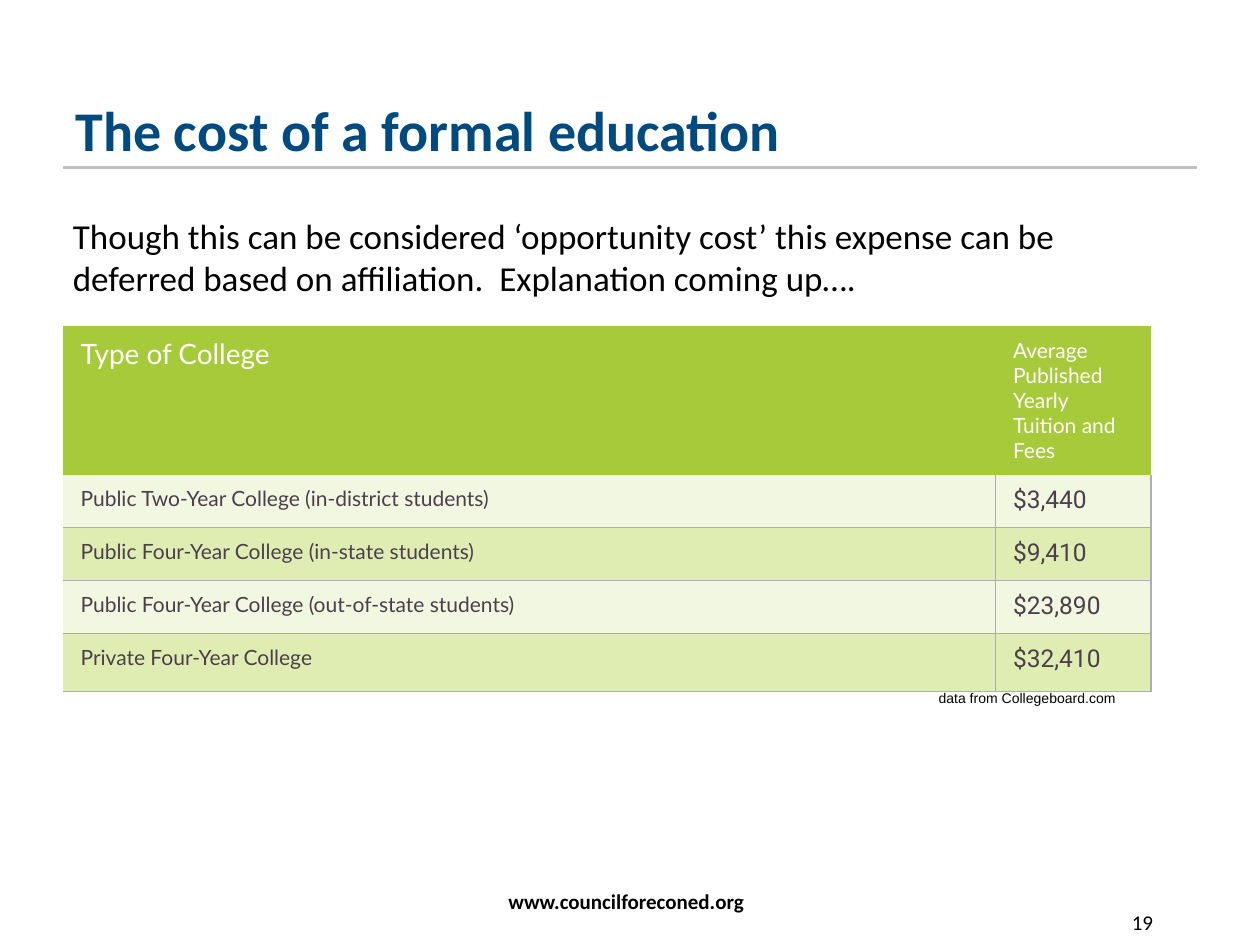
from lxml.etree import SubElement
from pptx import Presentation
from pptx.dml.color import RGBColor
from pptx.enum.text import MSO_ANCHOR as Anchor, PP_ALIGN as Align
from pptx.oxml.ns import qn
from pptx.util import Inches, Pt

deck = Presentation()
deck.slide_width, deck.slide_height = Inches(10), Inches(7.5)
page = deck.slides.add_slide(deck.slide_layouts[6])
across, down = deck.slide_width / 100, deck.slide_height / 100  # one percent


def color(hex_code):
    return RGBColor.from_string(hex_code)


def write(frame, text, font, size, ink, bold=False, align=Align.LEFT):
    frame.word_wrap = True
    para = frame.paragraphs[0]
    para.text = text
    para.alignment = align
    para.font.name, para.font.size, para.font.bold = font, Pt(size), bold
    para.font.color.rgb = color(ink)


# Rule under the title
rule = page.shapes.add_connector(1, int(5 * across), int(17.73 * down),
                                 int(95 * across), int(17.73 * down))
rule.line.color.rgb = color("C0C0C0")
rule.line.width = Pt(1.25)
SubElement(rule._element.spPr, qn("a:effectLst"))

# Text boxes: left, top, width, height in percent of the slide
texts = [
    (5, 8.93, 90, 8.93, "The cost of a formal education",
     "Calibri", 32, "004A80", True, Align.LEFT, Anchor.BOTTOM),
    (4.8, 22, 90, 6.67,
     "Though this can be considered ‘opportunity cost’ this expense can be "
     "deferred based on affiliation.  Explanation coming up….",
     "Calibri", 20, "000000", False, Align.LEFT, Anchor.TOP),
    (6.5, 93.33, 86.4, 6.67, "www.councilforeconed.org",
     "Calibri", 12, "000000", True, Align.CENTER, Anchor.TOP),
    (78.3, 95.6, 14.2, 6.67, "19",
     "Calibri", 12, "000000", False, Align.RIGHT, Anchor.TOP),
    (73.5, 72.27, 23.9, 3.2, "data from Collegeboard.com",
     "Arial", 8, "000000", False, Align.LEFT, Anchor.TOP),
]
for left, top, width, height, text, font, size, ink, bold, align, anchor in texts:
    box = page.shapes.add_textbox(int(left * across), int(top * down),
                                  int(width * across), int(height * down))
    box.text_frame.vertical_anchor = anchor
    write(box.text_frame, text, font, size, ink, bold, align)

# Tuition table
costs = [
    ("Type of College", "Average Published Yearly Tuition and Fees"),
    ("Public Two-Year College (in-district students)", "$3,440"),
    ("Public Four-Year College (in-state students)", "$9,410"),
    ("Public Four-Year College (out-of-state students)", "$23,890"),
    ("Private Four-Year College", "$32,410"),
]
column_widths = [74, 12.35]
row_heights = [15.73, 5.6, 5.6, 5.6, 6.13]
table = page.shapes.add_table(
    len(costs), 2, int(5 * across), int(34.5 * down),
    int(sum(column_widths) * across), int(sum(row_heights) * down)).table
table.first_row = table.horz_banding = False
for column, width in zip(table.columns, column_widths):
    column.width = int(width * across)

for r, (row, height) in enumerate(zip(table.rows, row_heights)):
    row.height = int(height * down)
    for c, cell in enumerate(row.cells):
        cell.margin_left = cell.margin_right = Inches(0.14)
        cell.margin_top = cell.margin_bottom = Inches(0.09)
        if r == 0:
            fill, ink, font, size, sides = "A7CA3A", "FFFFFF", "Lato", (16, 12)[c], ""
        else:
            fill, ink = ("F2F7E1", "E0EDB2")[(r - 1) % 2], "4B3F4C"
            font, size = (("Lato", 12), ("Roboto", 14))[c]
            sides = ("R", "LR")[c] + ("B" if r == 1 else "TB")
        write(cell.text_frame, costs[r][c], font, size, ink)
        for side in "LRTB":
            edge = SubElement(cell._tc.get_or_add_tcPr(), qn(f"a:ln{side}"), w=str(Pt(0.75)))
            if side in sides:
                paint = SubElement(edge, qn("a:solidFill"))
                SubElement(paint, qn("a:srgbClr"), val="AEAEAE")
            else:
                SubElement(edge, qn("a:noFill"))
        cell.fill.solid()
        cell.fill.fore_color.rgb = color(fill)

deck.save("out.pptx")
